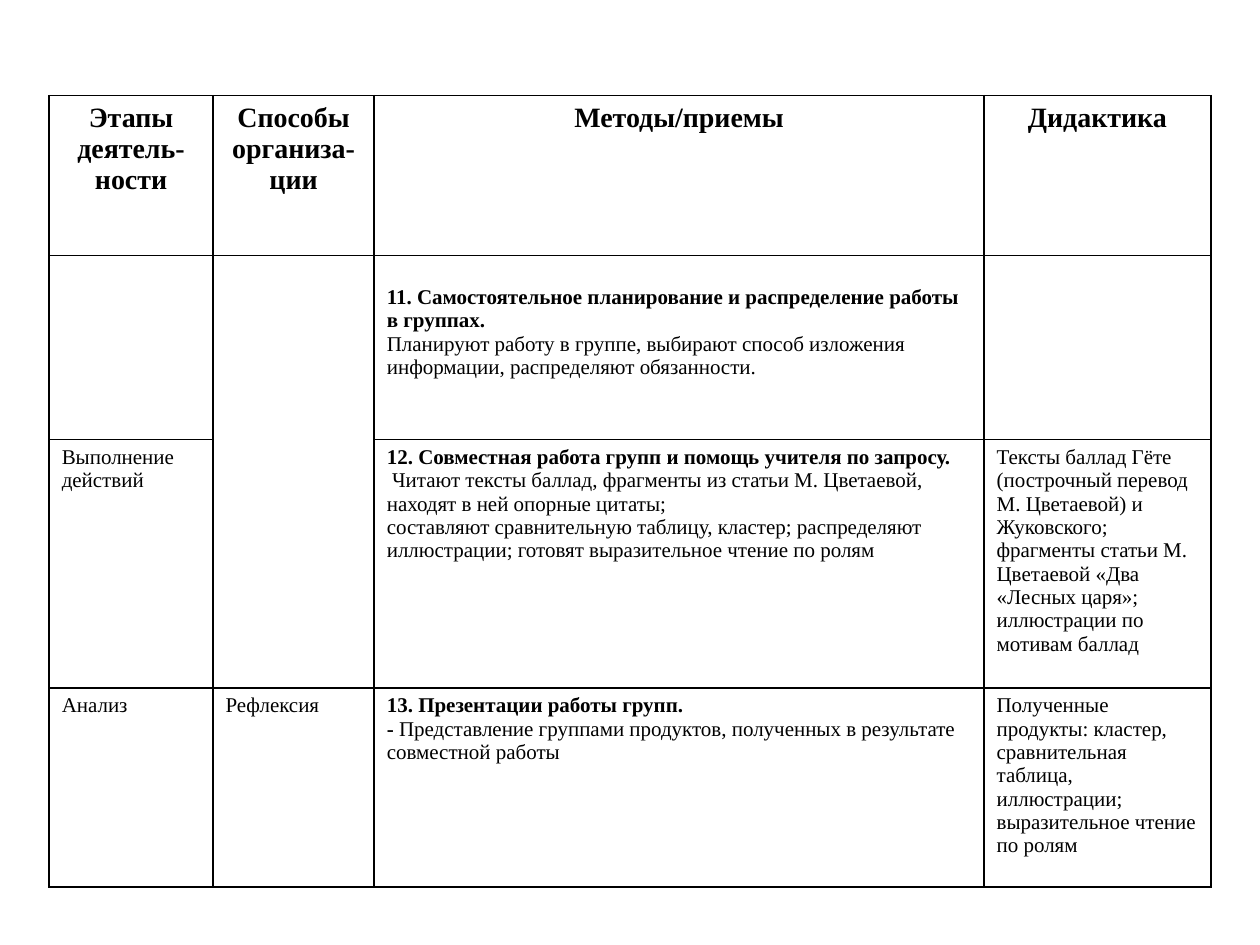
import pptx
import pptx.dml.color
import pptx.enum.text
import pptx.oxml
import pptx.oxml.ns
import pptx.util
from pptx.util import Inches

BLACK = pptx.dml.color.RGBColor(0, 0, 0)
ALIGN = pptx.enum.text.PP_ALIGN

HEADER_FORMAT = {"name": "Times New Roman", "size": pptx.util.Pt(16), "bold": True}
TITLE_FORMAT = {"name": "Times New Roman", "size": pptx.util.Pt(12), "bold": True}
BODY_FORMAT = {**TITLE_FORMAT, "bold": False}

COLUMN_WIDTHS = [1.3, 1.28, 4.84, 1.8]
ROW_HEIGHTS = [1.27, 1.46, 1.97, 1.58]

HEADERS = ["Этапы деятель-ности", "Способы организа-ции", "Методы/приемы", "Дидактика"]

# Each cell is a list of paragraphs, each paragraph a list of (text, format) runs
PLANNING = [
    [("11. Самостоятельное планирование и распределение работы в группах.", TITLE_FORMAT)],
    [("Планируют работу в группе, выбирают способ изложения информации, "
      "распределяют обязанности.", BODY_FORMAT)],
]
GROUP_WORK = [
    [("12. Совместная работа групп и помощь учителя по запросу.", TITLE_FORMAT)],
    [(" Читают тексты баллад, фрагменты из статьи М. Цветаевой, "
      "находят в ней опорные цитаты;", BODY_FORMAT)],
    [("составляют сравнительную таблицу, кластер; распределяют иллюстрации; "
      "готовят выразительное чтение по ролям", BODY_FORMAT)],
]
PRESENTATIONS = [
    [("13. Презентации работы групп.", TITLE_FORMAT)],
    [("- ", TITLE_FORMAT),
     ("Представление группами продуктов, полученных в результате совместной работы",
      BODY_FORMAT)],
]


def plain(text):
    return [[(text, BODY_FORMAT)]]


BODY_ROWS = [
    [[], [], PLANNING, []],
    [plain("Выполнение действий"), [], GROUP_WORK,
     plain("Тексты баллад Гёте (построчный перевод М. Цветаевой) и Жуковского; "
           "фрагменты статьи М. Цветаевой «Два «Лесных царя»; "
           "иллюстрации по мотивам баллад")],
    [plain("Анализ"), plain("Рефлексия"), PRESENTATIONS,
     plain("Полученные продукты: кластер, сравнительная таблица, иллюстрации; "
           "выразительное чтение по ролям")],
]


def add_run(paragraph, text, font_format):
    run = paragraph.add_run()
    run.text = text
    for name, value in font_format.items():
        setattr(run.font, name, value)
    run.font.color.rgb = BLACK


def fill_cell(cell, paragraphs, alignment):
    text_frame = cell.text_frame
    for index, runs in enumerate(paragraphs):
        paragraph = text_frame.add_paragraph() if index else text_frame.paragraphs[0]
        paragraph.alignment = alignment
        for text, font_format in runs:
            add_run(paragraph, text, font_format)


def set_borders(cell):
    properties = cell._tc.get_or_add_tcPr()
    for position, side in enumerate(("lnL", "lnR", "lnT", "lnB")):
        line = pptx.oxml.parse_xml(
            f'<a:{side} {pptx.oxml.ns.nsdecls("a")} w="{pptx.util.Pt(1)}">'
            f'<a:solidFill><a:srgbClr val="{BLACK}"/></a:solidFill></a:{side}>')
        properties.insert(position, line)


def add_lesson_table(slide):
    frame = slide.shapes.add_table(
        len(ROW_HEIGHTS), len(COLUMN_WIDTHS), Inches(0.39), Inches(0.76),
        Inches(sum(COLUMN_WIDTHS)), Inches(sum(ROW_HEIGHTS)))
    table = frame.table
    for column, width in zip(table.columns, COLUMN_WIDTHS):
        column.width = Inches(width)
    for row, height in zip(table.rows, ROW_HEIGHTS):
        row.height = Inches(height)

    # Text, fill and borders of every cell
    header_row = [[[(text, HEADER_FORMAT)]] for text in HEADERS]
    for row_index, contents in enumerate([header_row] + BODY_ROWS):
        alignment = ALIGN.LEFT if row_index else ALIGN.CENTER
        for column_index, paragraphs in enumerate(contents):
            cell = table.cell(row_index, column_index)
            fill_cell(cell, paragraphs, alignment)
            cell.fill.background()
            set_borders(cell)

    # The planning text starts one line lower; one cell spans two rows
    table.cell(1, 2).margin_top = Inches(0.24)
    table.cell(1, 1).merge(table.cell(2, 1))


def main():
    presentation = pptx.Presentation()
    presentation.slide_width = Inches(10)
    presentation.slide_height = Inches(7.5)
    slide = presentation.slides.add_slide(presentation.slide_layouts[6])
    add_lesson_table(slide)
    presentation.save("out.pptx")


if __name__ == "__main__":
    main()
